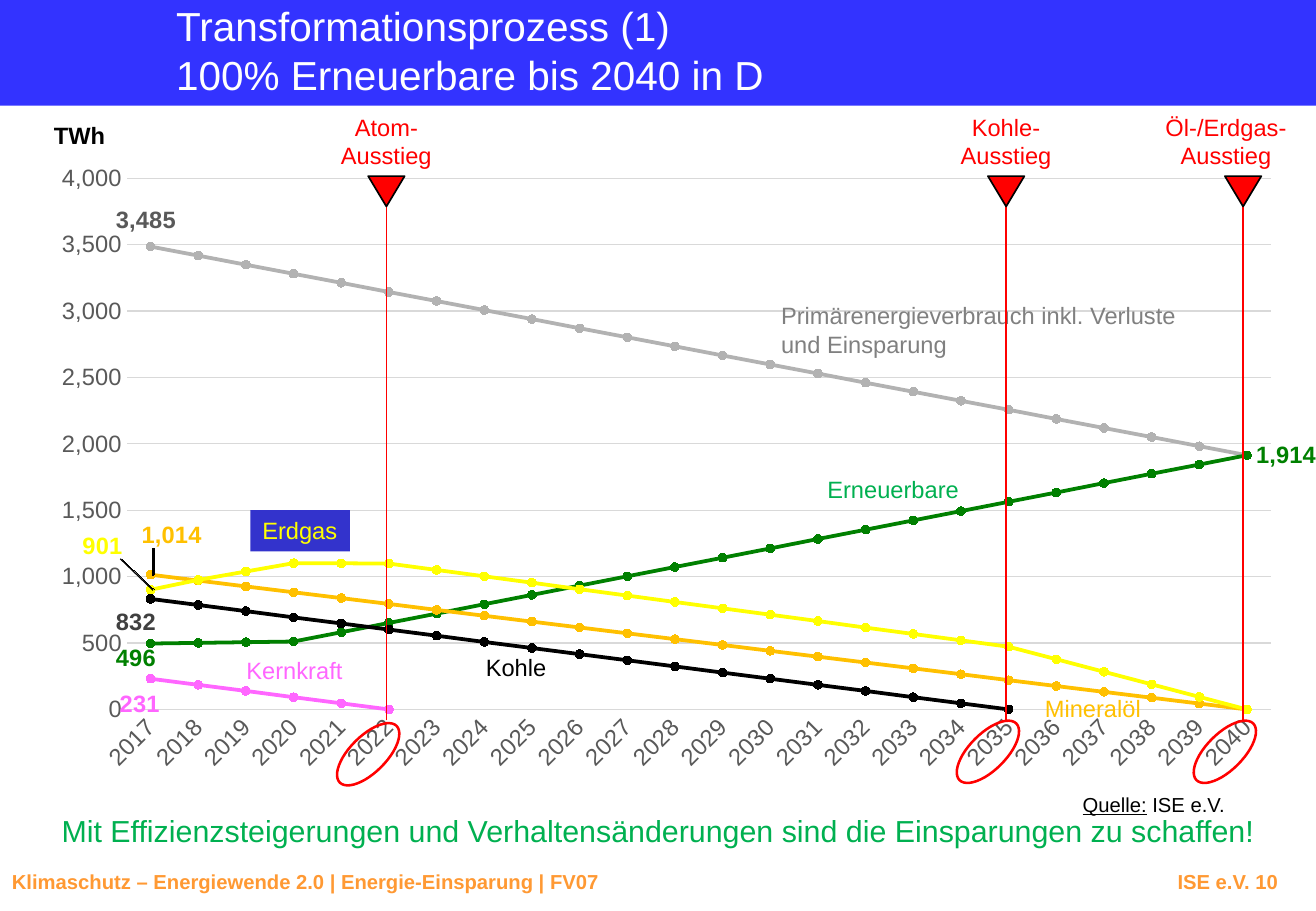
from lxml import etree
from pptx import Presentation
from pptx.chart.data import CategoryChartData
from pptx.dml.color import RGBColor
from pptx.enum import chart as ch, shapes, text
from pptx.oxml import parse_xml
from pptx.oxml.ns import nsdecls, qn
from pptx.util import Inches, Pt

# Content
COLORS = {"header": "3333FF", "white": "FFFFFF", "black": "000000", "footer": "FF9933",
          "axis": "595959", "grid": "D9D9D9", "label_gray": "808080", "primary": "B2B2B2",
          "renewable": "008000", "green": "00B050", "oil": "FFC000", "coal": "000000",
          "coal_label": "404040", "nuclear": "FF66FF", "gas": "FFFF00",
          "gas_box": "3333CC", "red": "FF0000"}
TITLE = "Transformationsprozess (1)\v100% Erneuerbare bis 2040 in D"
MESSAGE = "Mit Effizienzsteigerungen und Verhaltensänderungen sind die Einsparungen zu schaffen!"
FOOTER = "Klimaschutz – Energiewende 2.0 | Energie-Einsparung | FV07\tISE e.V. 10"
YEARS = range(2017, 2041)
# name, colour, known values by year (straight lines between them)
SERIES = [
    ("Primärenergieverbrauch", "primary", {2017: 3485, 2040: 1914}),
    ("Erneuerbare", "renewable", {2017: 496, 2018: 501, 2019: 506, 2020: 511, 2040: 1914}),
    ("Mineralöl", "oil", {2017: 1014, 2040: 0}),
    ("Kohle", "coal", {2017: 832, 2035: 0}),
    ("Kernkraft", "nuclear", {2017: 231, 2022: 0}),
    ("Erdgas", "gas", {2017: 901, 2018: 975, 2019: 1038, 2020: 1101, 2022: 1098,
                       2035: 472, 2040: 0}),
]
# series, year, colour, shift from the right-hand position (inches)
VALUE_LABELS = [
    (0, 2017, "axis", -0.36, -0.22),
    (1, 2017, "renewable", -0.36, 0.12),
    (1, 2040, "renewable", 0, 0),
    (2, 2017, "oil", -0.15, -0.33),
    (3, 2017, "coal_label", -0.36, 0.19),
    (4, 2017, "nuclear", -0.33, 0.21),
    (5, 2017, "gas", -0.63, -0.36),
]
LEADERS = [((1.26, 4.51), (1.26, 4.74)), ((0.99, 4.6), (1.26, 4.86))]
# text, box, colour
LINE_LABELS = [
    ("Primärenergieverbrauch inkl. Verluste\vund Einsparung", (6.33, 2.43, 3.47, 0.57), "label_gray"),
    ("Erneuerbare", (6.71, 3.86, 1.29, 0.34), "green"),
    ("Erdgas", (2.06, 4.2, 0.82, 0.34), "gas"),
    ("Mineralöl", (8.5, 5.66, 0.99, 0.34), "oil"),
    ("Kohle", (3.9, 5.33, 0.7, 0.34), "coal"),
    ("Kernkraft", (1.93, 5.35, 1, 0.34), "nuclear"),
]
# text, x of the line, centre of the text, top of the ellipse
EXITS = [("Atom-\vAusstieg", 3.18, 3.18, 5.88),
         ("Kohle-\vAusstieg", 8.28, 8.28, 5.86),
         ("Öl-/Erdgas-\vAusstieg", 10.23, 10.09, 5.86)]
CHART_BOX = (0.26, 1.29, 10.58, 5.22)
PLOT = {"x": 0.074, "y": 0.034, "w": 0.89, "h": 0.838}


def rgb(name):
    return RGBColor.from_string(COLORS[name])


def box(values):
    return [Inches(v) for v in values]


def style(font, size, color, bold=False):
    font.name, font.size, font.bold = "Arial", Pt(size), bold
    font.color.rgb = rgb(color)


def fill_text(sp, content, size, color, bold=False, align=text.PP_ALIGN.LEFT,
              wrap=False, inset=None):
    tf = sp.text_frame
    tf.word_wrap, tf.auto_size = wrap, text.MSO_AUTO_SIZE.NONE
    tf.vertical_anchor = text.MSO_ANCHOR.TOP
    if inset is not None:
        tf.margin_left = tf.margin_right = tf.margin_top = tf.margin_bottom = Inches(inset)
    p = tf.paragraphs[0]
    p.text, p.alignment = content, align
    for r in p.runs:
        style(r.font, size, color, bold)
    return p


def add_text(at, *args, **kwargs):
    sp = slide.shapes.add_textbox(*box(at))
    return sp, fill_text(sp, *args, **kwargs)


def add_shape(kind, at, fill=None, line=None, width=1, rotation=0):
    sp = slide.shapes.add_shape(kind, *box(at))
    sp.shadow.inherit = False
    sp.rotation = rotation
    if fill:
        sp.fill.solid()
        sp.fill.fore_color.rgb = rgb(fill)
    else:
        sp.fill.background()
    if line:
        sp.line.color.rgb, sp.line.width = rgb(line), Pt(width)
    else:
        sp.line.fill.background()
    return sp


def add_line(start, end, color, width):
    c = slide.shapes.add_connector(shapes.MSO_CONNECTOR.STRAIGHT, *box(start + end))
    c.line.color.rgb, c.line.width = rgb(color), Pt(width)
    etree.SubElement(c._element.spPr, qn("a:effectLst"))


def yearly(known):
    """Whole values per year on straight lines between the known years."""
    stops = sorted(known)
    values = []
    for year in YEARS:
        if year > stops[-1]:
            values.append(None)
            continue
        a = max(s for s in stops if s <= year)
        b = min(s for s in stops if s >= year)
        share = (year - a) / (b - a) if b > a else 0
        values.append(round(known[a] + share * (known[b] - known[a])))
    return values


def manual_layout(parts, inner=False):
    target = '<c:layoutTarget val="inner"/><c:xMode val="edge"/><c:yMode val="edge"/>' if inner else ""
    body = "".join(f'<c:{k} val="{v:.3f}"/>' for k, v in parts.items())
    return parse_xml(f'<c:layout {nsdecls("c")}><c:manualLayout>{target}{body}'
                     '</c:manualLayout></c:layout>')


prs = Presentation()
prs.slide_width, prs.slide_height = Inches(10.83), Inches(7.5)
slide = prs.slides.add_slide(prs.slide_layouts[5])

# Header and title
header = add_shape(shapes.MSO_SHAPE.RECTANGLE, (0, 0, 10.83, 0.87), "header")
slide.shapes._spTree.insert(2, header._element)
title = slide.shapes.title
title.left, title.top, title.width, title.height = box((1.45, 0.01, 9.14, 0.81))
fill_text(title, TITLE, 24, "white", wrap=True, inset=0)

# Chart
data = CategoryChartData(number_format="#,##0")
data.categories = [str(year) for year in YEARS]
for name, _, known in SERIES:
    data.add_series(name, yearly(known))
chart = slide.shapes.add_chart(ch.XL_CHART_TYPE.LINE_MARKERS, *box(CHART_BOX), data).chart
chart.has_legend = chart.has_title = False
style(chart.font, 10, "black")
plot_area = chart._chartSpace.chart.plotArea
for old in plot_area.findall(qn("c:layout")):
    plot_area.remove(old)
plot_area.insert(0, manual_layout(PLOT, inner=True))

for axis in (chart.category_axis, chart.value_axis):
    axis.major_tick_mark = axis.minor_tick_mark = ch.XL_TICK_MARK.NONE
    style(axis.tick_labels.font, 14, "axis")
cat, val = chart.category_axis, chart.value_axis
cat.format.line.color.rgb, cat.format.line.width = rgb("grid"), Pt(0.75)
cat._element.find(qn("c:txPr")).find(qn("a:bodyPr")).set("rot", "-2700000")
val.minimum_scale, val.maximum_scale, val.major_unit = 0, 4000, 500
val.tick_labels.number_format = "#,##0"
val.tick_labels.number_format_is_linked = False
val.format.line.fill.background()
grid = val.major_gridlines.format.line
grid.color.rgb, grid.width = rgb("grid"), Pt(0.75)

plot = chart.plots[0]
plot.vary_by_categories = False
for ser, (_, color, _) in zip(plot.series, SERIES):
    ser.smooth = False
    ser.format.line.color.rgb, ser.format.line.width = rgb(color), Pt(2.25)
    ser.marker.style, ser.marker.size = ch.XL_MARKER_STYLE.CIRCLE, 5
    ser.marker.format.fill.solid()
    ser.marker.format.fill.fore_color.rgb = rgb(color)
    ser.marker.format.line.color.rgb = rgb(color)
    ser.data_labels.show_value = False

# Value labels
for index, year, color, dx, dy in VALUE_LABELS:
    ser = plot.series[index]
    label = ser.points[year - YEARS[0]].data_label
    style(label.font, 14, color, bold=True)
    label.position = ch.XL_LABEL_POSITION.RIGHT
    dl = ser.data_labels._element.findall(qn("c:dLbl"))[-1]
    if color == "gas":
        dl.insert(1, parse_xml(f'<c:spPr {nsdecls("c", "a")}><a:solidFill><a:srgbClr '
                               f'val="{COLORS["gas_box"]}"/></a:solidFill></c:spPr>'))
    if dx or dy:
        dl.insert(1, manual_layout({"x": dx / CHART_BOX[2], "y": dy / CHART_BOX[3]}))
for start, end in LEADERS:
    add_line(start, end, "black", 0.75)

# Unit and line labels
add_text((0.34, 0.95, 0.63, 0.34), "TWh", 14, "black", bold=True, align=text.PP_ALIGN.CENTER)
for content, at, color in LINE_LABELS:
    sp, _ = add_text(at, content, 14, color)
    if color == "gas":
        sp.fill.solid()
        sp.fill.fore_color.rgb = rgb("gas_box")

# Exit dates
for content, x, center, ellipse_top in EXITS:
    add_line((x, 5.93), (x, 1.63), "red", 1)
    add_text((center - 0.6, 0.88, 1.2, 0.57), content, 14, "red", align=text.PP_ALIGN.CENTER)
    add_shape(shapes.MSO_SHAPE.ISOSCELES_TRIANGLE, (x - 0.15, 1.45, 0.3, 0.25),
              "red", "black", rotation=180)
    add_shape(shapes.MSO_SHAPE.OVAL, (x - 0.3, ellipse_top, 0.3, 0.66),
              line="red", width=1.5, rotation=45)

# Message, source and footer
add_text((0, 6.62, 10.83, 0.44), MESSAGE, 18, "green", align=text.PP_ALIGN.CENTER,
         wrap=True, inset=0.07)
_, p = add_text((8.91, 6.52, 1.23, 0.2), "Quelle:", 12, "black", inset=0)
p.runs[0].font.underline = True
r = p.add_run()
r.text = " ISE e.V."
style(r.font, 12, "black")
_, p = add_text((0, 7.11, 10.83, 0.3), FOOTER, 12, "footer", bold=True, wrap=True)
tabs = etree.SubElement(p._p.get_or_add_pPr(), qn("a:tabLst"))
etree.SubElement(tabs, qn("a:tab"), pos=str(Inches(10.42)), algn="r")

prs.save("out.pptx")
